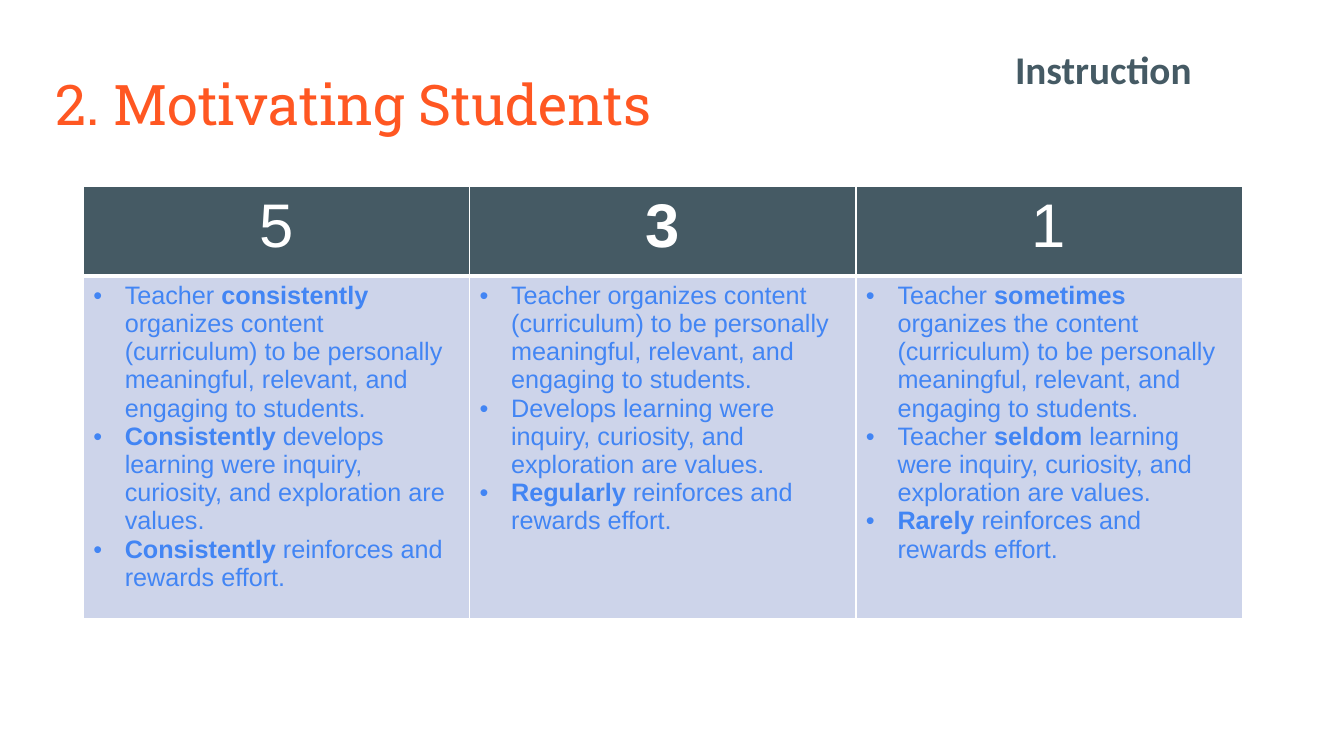
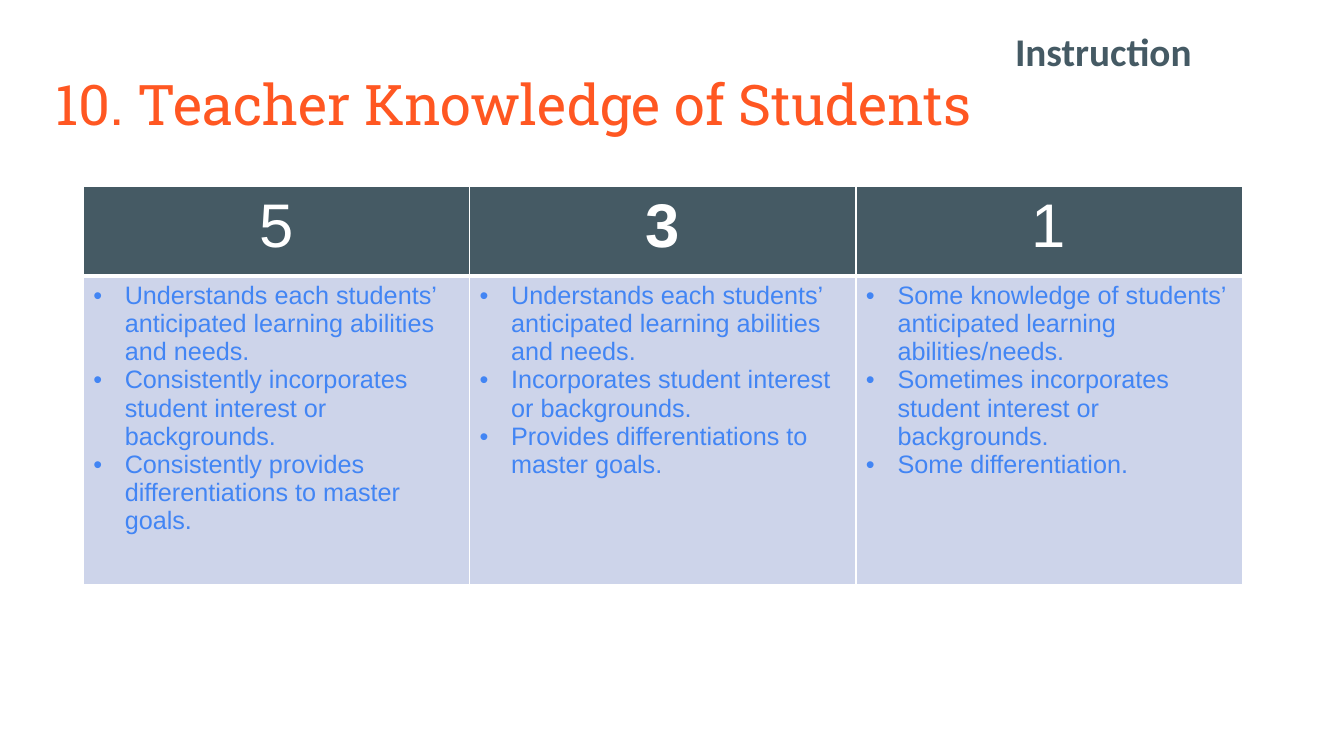
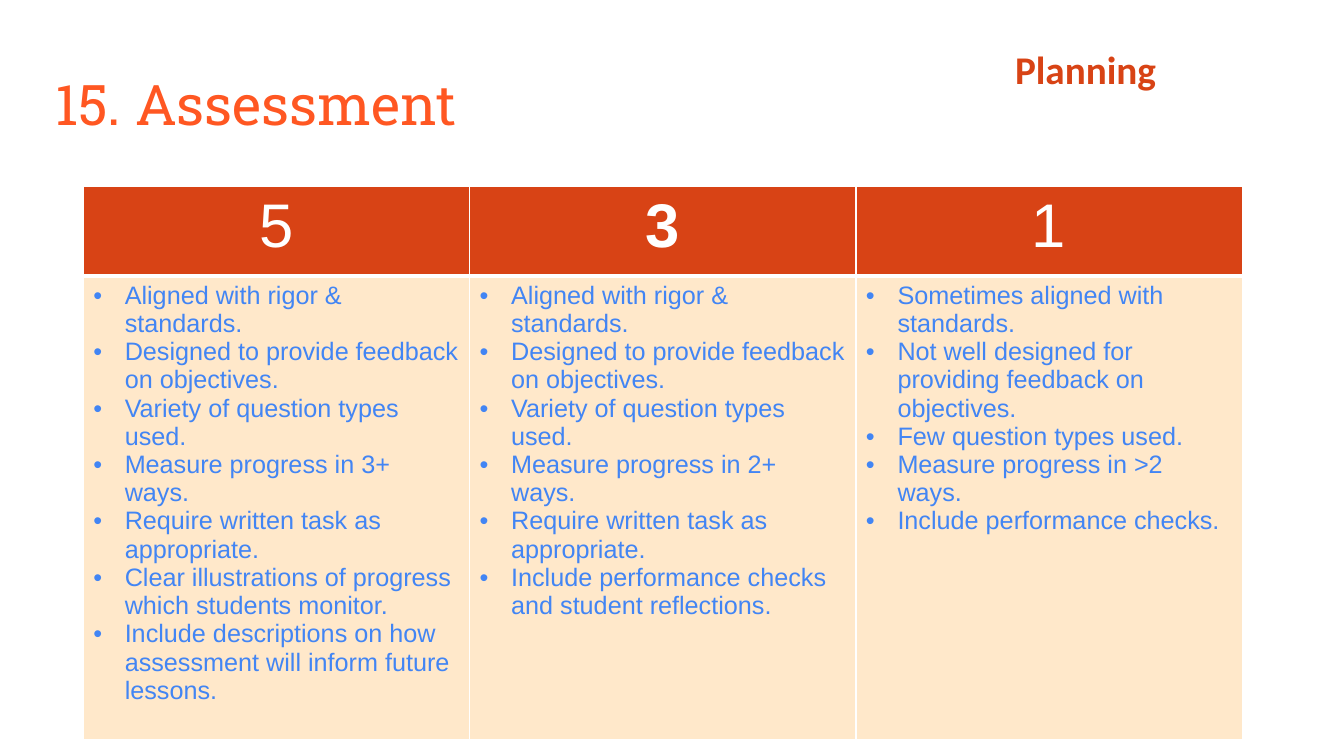
from pptx import Presentation
from pptx.dml.color import RGBColor
from pptx.enum.text import MSO_ANCHOR, MSO_AUTO_SIZE, PP_ALIGN
from pptx.oxml.ns import qn
from pptx.util import Pt
from lxml.etree import SubElement

WHITE = RGBColor(0xFF, 0xFF, 0xFF)
ORANGE = RGBColor(0xFF, 0x57, 0x22)
BLUE = RGBColor(0x42, 0x85, 0xF4)
SLATE = RGBColor(0x45, 0x5A, 0x64)
LAVENDER = RGBColor(0xCD, 0xD4, 0xEA)
RUST = RGBColor(0xD8, 0x43, 0x15)
PEACH = RGBColor(0xFF, 0xE8, 0xCA)

DOMAIN_COLORS = {"Instruction": (SLATE, LAVENDER), "Planning": (RUST, PEACH)}
SCORES = ("5", "**3**", "1")
COLUMN_WIDTH = 276
HEADER_HEIGHT = 64
BODY_HEIGHT = 220
BULLET_INDENT = 22.5
LABEL_TOP = 28.8

MOTIVATING_STUDENTS = [
    [
        "Teacher **consistently** organizes content (curriculum) to be personally meaningful, relevant, and engaging to students.",
        "**Consistently** develops learning were inquiry, curiosity, and exploration are values.",
        "**Consistently** reinforces and rewards effort.",
    ],
    [
        "Teacher organizes content (curriculum) to be personally meaningful, relevant, and engaging to students.",
        "Develops learning were inquiry, curiosity, and exploration are values.",
        "**Regularly** reinforces and rewards effort.",
    ],
    [
        "Teacher **sometimes** organizes the content (curriculum) to be personally meaningful, relevant, and engaging to students.",
        "Teacher **seldom** learning were inquiry, curiosity, and exploration are values.",
        "**Rarely** reinforces and rewards effort.",
    ],
]

KNOWLEDGE_OF_STUDENTS = [
    [
        "Understands each students’ anticipated learning abilities and needs.",
        "Consistently incorporates student interest or backgrounds.",
        "Consistently provides differentiations to master goals.",
    ],
    [
        "Understands each students’ anticipated learning abilities and needs.",
        "Incorporates student interest or backgrounds.",
        "Provides differentiations to master goals.",
    ],
    [
        "Some knowledge of students’ anticipated learning abilities/needs.",
        "Sometimes incorporates student interest or backgrounds.",
        "Some differentiation.",
    ],
]

ASSESSMENT = [
    [
        "Aligned with rigor & standards.",
        "Designed to provide feedback on objectives.",
        "Variety of question types used.",
        "Measure progress in 3+ ways.",
        "Require written task as appropriate.",
        "Clear illustrations of progress which students monitor.",
        "Include descriptions on how assessment will inform future lessons.",
    ],
    [
        "Aligned with rigor & standards.",
        "Designed to provide feedback on objectives.",
        "Variety of question types used.",
        "Measure progress in 2+ ways.",
        "Require written task as appropriate.",
        "Include performance checks and student reflections.",
    ],
    [
        "Sometimes aligned with standards.",
        "Not well designed for providing feedback on objectives.",
        "Few question types used.",
        "Measure progress in >2 ways.",
        "Include performance checks.",
    ],
]


def add_runs(paragraph, text, font_name, size, color):
    for index, part in enumerate(text.split("**")):
        if part:
            run = paragraph.add_run()
            run.text = part
            run.font.name = font_name
            run.font.size = Pt(size)
            run.font.color.rgb = color
            run.font.bold = index % 2 == 1


def add_text_box(slide, left, top, width, height):
    shape = slide.shapes.add_textbox(Pt(left), Pt(top), Pt(width), Pt(height))
    shape.text_frame.word_wrap = True
    return shape.text_frame


def add_title(slide, text):
    frame = add_text_box(slide, 32.4, 46.8, 894, 60)
    frame.vertical_anchor = MSO_ANCHOR.MIDDLE
    paragraph = frame.paragraphs[0]
    paragraph.line_spacing = 0.9
    add_runs(paragraph, text, "Roboto Slab", 40, ORANGE)


def add_domain_label(slide, domain, color, top):
    frame = add_text_box(slide, 718, top, 228, 41)
    frame.auto_size = MSO_AUTO_SIZE.SHAPE_TO_FIT_TEXT
    add_runs(frame.paragraphs[0], f"**{domain}**", "Calibri", 28, color)


def style_cell(cell, color, top_border, bottom_border):
    properties = cell._tc.get_or_add_tcPr()
    borders = {"a:lnL": 1, "a:lnR": 1, "a:lnT": top_border, "a:lnB": bottom_border}
    for tag, width in borders.items():
        line = SubElement(properties, qn(tag), w=str(Pt(width)))
        fill = SubElement(line, qn("a:solidFill"))
        SubElement(fill, qn("a:srgbClr"), val=str(WHITE))
    cell.fill.solid()
    cell.fill.fore_color.rgb = color


def make_bullet(paragraph):
    properties = paragraph._p.get_or_add_pPr()
    properties.set("marL", str(Pt(BULLET_INDENT)))
    properties.set("indent", str(-Pt(BULLET_INDENT)))
    SubElement(properties, qn("a:buFont"), typeface="Arial")
    SubElement(properties, qn("a:buChar"), char="•")


def add_bullets(cell, bullets):
    frame = cell.text_frame
    for index, text in enumerate(bullets):
        paragraph = frame.add_paragraph() if index else frame.paragraphs[0]
        make_bullet(paragraph)
        add_runs(paragraph, text, "Arial", 18, BLUE)


def add_rubric(slide, columns, header_color, body_color):
    table = slide.shapes.add_table(
        2, len(columns), Pt(59.4), Pt(133.4),
        Pt(COLUMN_WIDTH * len(columns)), Pt(HEADER_HEIGHT + BODY_HEIGHT),
    ).table
    table.first_row = False
    table.horz_banding = False
    table.rows[0].height = Pt(HEADER_HEIGHT)
    table.rows[1].height = Pt(BODY_HEIGHT)
    for index, (score, bullets) in enumerate(zip(SCORES, columns)):
        table.columns[index].width = Pt(COLUMN_WIDTH)
        header, body = table.cell(0, index), table.cell(1, index)
        style_cell(header, header_color, 1, 3)
        style_cell(body, body_color, 3, 1)
        paragraph = header.text_frame.paragraphs[0]
        paragraph.alignment = PP_ALIGN.CENTER
        add_runs(paragraph, score, "Arial", 44, WHITE)
        add_bullets(body, bullets)


def add_rubric_slide(presentation, title, domain, columns, label_top=LABEL_TOP):
    slide = presentation.slides.add_slide(presentation.slide_layouts[6])
    header_color, body_color = DOMAIN_COLORS[domain]
    add_title(slide, title)
    add_rubric(slide, columns, header_color, body_color)
    add_domain_label(slide, domain, header_color, label_top)


def main():
    presentation = Presentation()
    presentation.slide_width = Pt(960)
    presentation.slide_height = Pt(540)
    add_rubric_slide(presentation, "2. Motivating Students", "Instruction", MOTIVATING_STUDENTS)
    add_rubric_slide(
        presentation, "10. Teacher Knowledge of Students", "Instruction",
        KNOWLEDGE_OF_STUDENTS, label_top=15.8,
    )
    add_rubric_slide(presentation, "15. Assessment", "Planning", ASSESSMENT)
    presentation.save("out.pptx")


if __name__ == "__main__":
    main()
